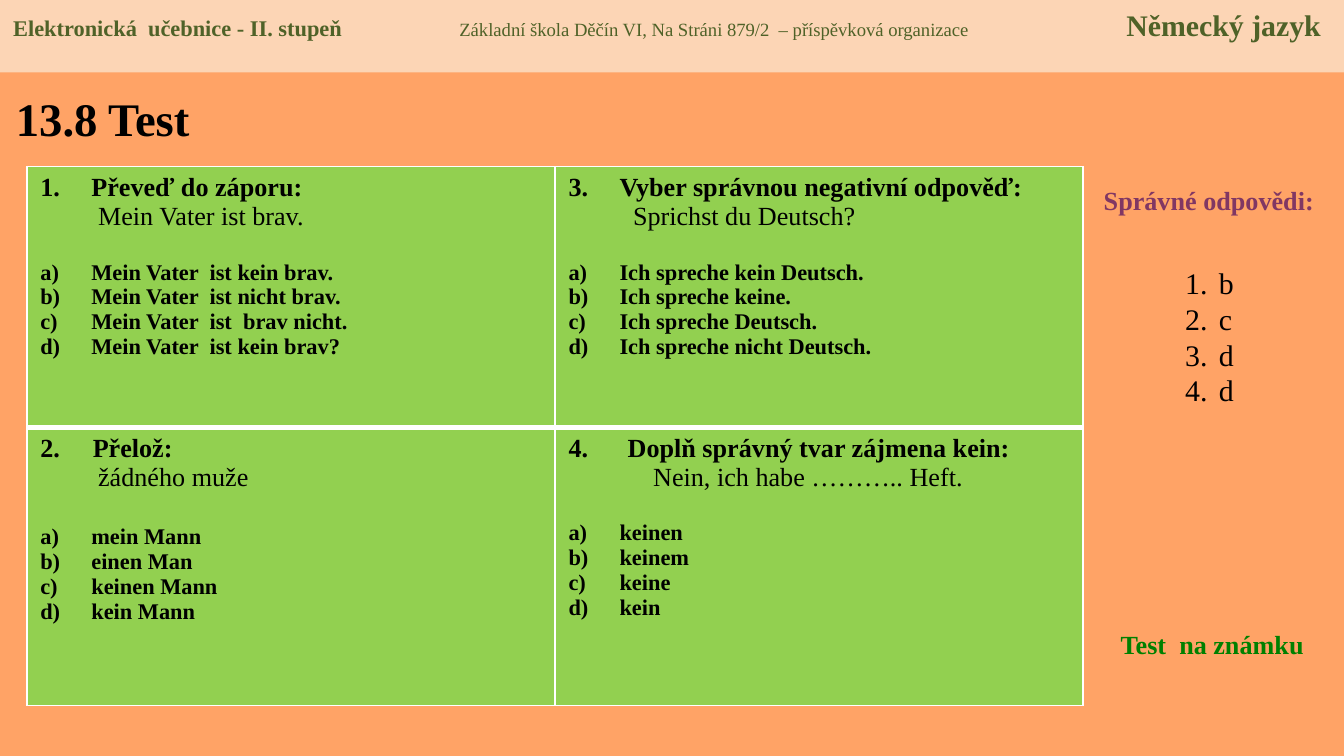
from lxml.etree import SubElement
from pptx import Presentation
from pptx.dml.color import RGBColor
from pptx.enum.shapes import MSO_SHAPE
from pptx.enum.text import MSO_ANCHOR, PP_ALIGN
from pptx.oxml.ns import qn
from pptx.util import Inches, Pt

HUES = {
    "back": "FFA366", "band": "FCD5B5", "head": "4F6228", "ink": "000000",
    "key": "813763", "mark": "008000", "cell": "92D050", "line": "FFFFFF",
}
FONT = {"name": "Times New Roman", "bold": False}
TASKS = [
    ("Převeď do záporu:", "Mein Vater ist brav.", 0.38, 0.43, 15.5,
     ["Mein Vater  ist kein brav.", "Mein Vater  ist nicht brav.",
      "Mein Vater  ist  brav nicht.", "Mein Vater  ist kein brav?"]),
    ("2.\tPřelož:", "žádného muže", 0.39, 0.43, 17.5,
     ["mein Mann", "einen Man", "keinen Mann", "kein Mann"]),
    ("Vyber správnou negativní odpověď:", "Sprichst du Deutsch?", 0.38, 0.48, 15.5,
     ["Ich spreche kein Deutsch.", "Ich spreche keine.",
      "Ich spreche Deutsch.", "Ich spreche nicht Deutsch."]),
    ("4.\tDoplň správný tvar zájmena kein:", "Nein, ich habe ……….. Heft.", 0.44, 0.63, 15.5,
     ["keinen", "keinem", "keine", "kein"]),
]


def color(name):
    """Return the named colour."""
    return RGBColor.from_string(HUES[name])


def write(para, text, size, hue="ink", **extra):
    """Add a formatted run to a paragraph."""
    run = para.add_run()
    run.text = text
    for key, value in {**FONT, "size": Pt(size), **extra}.items():
        setattr(run.font, key, value)
    run.font.color.rgb = color(hue)


def indent(para, left, hang=0.0):
    """Set the left and first-line indents in inches."""
    props = para._p.get_or_add_pPr()
    props.set("marL", str(Inches(left)))
    props.set("indent", str(-Inches(hang)))
    return props


def number(para, kind, width, start=1):
    """Give a paragraph an automatic number."""
    props = indent(para, width, width)
    SubElement(props, qn("a:buAutoNum"), type=kind, startAt=str(start))


def next_para(frame):
    """Return the empty first paragraph or a new one."""
    first = frame.paragraphs[0]
    return frame.add_paragraph() if first.runs else first


def add_box(slide, place, **extra):
    """Add a wrapping text box and return its frame."""
    frame = slide.shapes.add_textbox(*map(Inches, place)).text_frame
    for key, value in {"word_wrap": True, **extra}.items():
        setattr(frame, key, value)
    return frame


def add_label(slide, place, text, size, hue, align=PP_ALIGN.LEFT, **extra):
    """Add a bold label of one line."""
    para = add_box(slide, place, **extra).paragraphs[0]
    para.alignment = align
    write(para, text, size, hue, bold=True)


def add_header(slide):
    """Add the top band with three texts on tab stops."""
    band = slide.shapes.add_shape(MSO_SHAPE.RECTANGLE, 0, 0, Inches(10), Inches(0.54))
    band.shadow.inherit = False
    band.fill.solid()
    band.fill.fore_color.rgb = color("band")
    band.line.fill.background()
    frame = band.text_frame
    frame.vertical_anchor = MSO_ANCHOR.TOP
    para = frame.paragraphs[0]
    para.alignment = PP_ALIGN.LEFT
    tabs = SubElement(para._p.get_or_add_pPr(), qn("a:tabLst"))
    for pos, side in ((3.32, "l"), (9.73, "r")):
        SubElement(tabs, qn("a:tab"), pos=str(Inches(pos)), algn=side)
    write(para, "Elektronická  učebnice - II. stupeň\t", 12, "head", bold=True)
    write(para, "Základní škola Děčín VI, Na Stráni 879/2  – příspěvková organizace\t", 10, "head")
    write(para, "Německý jazyk", 16, "head", bold=True)


def add_key(slide):
    """Add the numbered list of right answers."""
    frame = add_box(slide, (8.72, 1.92, 0.55, 1.72))
    for letter in "bcdd":
        para = next_para(frame)
        number(para, "arabicPeriod", 0.25)
        write(para, letter, 16)


def draw_edges(cell, widths):
    """Draw the cell borders, given in points by side."""
    props = cell._tc.get_or_add_tcPr()
    for place, (side, width) in enumerate(widths.items()):
        line = SubElement(props, qn("a:ln" + side), w=str(Pt(width)))
        fill = SubElement(line, qn("a:solidFill"))
        SubElement(fill, qn("a:srgbClr"), val=HUES["line"])
        props.insert(place, line)


def fill_cell(cell, index, task):
    """Write one test question with its options."""
    title, text, hang, left, gap, options = task
    cell.fill.solid()
    cell.fill.fore_color.rgb = color("cell")
    frame = cell.text_frame
    para = next_para(frame)
    if "\t" in title:
        indent(para, hang, hang)
    else:
        number(para, "arabicPeriod", hang, index + 1)
    write(para, title, 14, bold=True)
    para = next_para(frame)
    indent(para, left)
    write(para, text, 14)
    for place, option in enumerate(options):
        para = next_para(frame)
        number(para, "alphaLcParenR", 0.38)
        para.space_before = Pt(0 if place else gap)
        write(para, option, 12, bold=True)


def add_test(slide):
    """Add the table of questions, ordered down the columns."""
    place = map(Inches, (0.2, 1.24, 7.86, 4.01))
    table = slide.shapes.add_table(2, 2, *place).table
    table.first_row = table.horz_banding = False
    for row, height in zip(table.rows, (1.94, 2.07)):
        row.height = Inches(height)
    for index, task in enumerate(TASKS):
        col, row = divmod(index, 2)
        cell = table.cell(row, col)
        fill_cell(cell, index, task)
        draw_edges(cell, {"L": 1, "R": 1, "T": 1 if row == 0 else 3, "B": 3 if row == 0 else 1})


def main():
    """Build and save the slide."""
    deck = Presentation()
    deck.slide_width, deck.slide_height = Inches(10), Inches(10 * 9 / 16)
    slide = deck.slides.add_slide(deck.slide_layouts[6])
    slide.background.fill.solid()
    slide.background.fill.fore_color.rgb = color("back")
    add_label(slide, (0.02, 0.55, 3.19, 0.65), "13.8 Test", 25, "ink",
              vertical_anchor=MSO_ANCHOR.MIDDLE)
    add_label(slide, (8.05, 1.32, 1.89, 0.34), "Správné odpovědi:", 14, "key", PP_ALIGN.CENTER)
    add_key(slide)
    add_label(slide, (8.24, 4.63, 1.6, 0.34), "Test  na známku", 14, "mark")
    add_test(slide)
    add_header(slide)
    deck.save("out.pptx")


if __name__ == "__main__":
    main()
